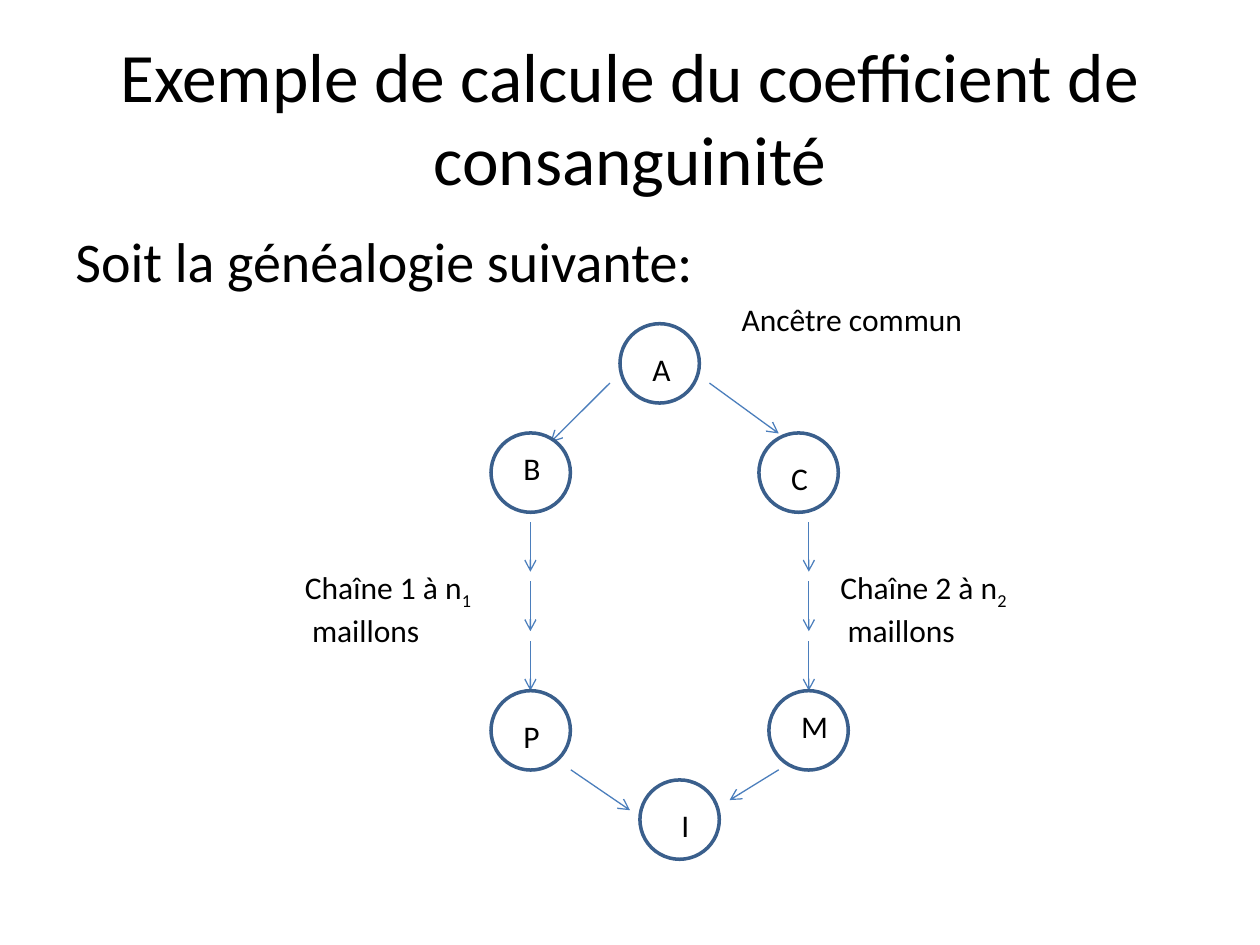
from pptx import Presentation
from pptx.dml.color import RGBColor
from pptx.enum import shapes, text
from pptx.oxml import ns
from pptx.util import Pt
from lxml import etree

COLORS = {"text": "000000", "circle": "FFFFFF", "outline": "3A5F8C", "arrow": "4B7EBC"}
FONT = "Calibri"
DIAMETER = 45.36

# Name: circle left, circle top, letter left, letter top
PEOPLE = {
    "A": (354.3, 185, 365.7, 196.4),
    "B": (280.6, 247.4, 292, 253),
    "C": (433.7, 247.4, 445, 258.7),
    "P": (280.6, 394.7, 292, 406),
    "M": (439.4, 394.7, 450.7, 400.4),
    "I": (365.7, 445.7, 382.3, 456.8),
}
DIAGONALS = [
    (405.4, 218.9, 445, 247.7),
    (348.5, 218.9, 314.6, 252.7),
    (445, 439.9, 416.9, 457.2),
    (326.2, 439.9, 360, 463),
]
CHAIN_COLUMNS = (303.1, 462.2)
CHAIN_TOP, LINK_STEP, LINK_LENGTH, LINK_COUNT = 298.3, 34, 28.4, 3


def color(name):
    return RGBColor.from_string(COLORS[name])


def add_span(para, words, size, subscript=False):
    span = para.add_run()
    span.text = words
    span.font.name = FONT
    span.font.size = Pt(size)
    span.font.color.rgb = color("text")
    if subscript:
        span._r.get_or_add_rPr().set("baseline", "-25000")


def add_text(page, lines, left, top, width, height, size=18,
             align=text.PP_ALIGN.LEFT, anchor=text.MSO_ANCHOR.TOP):
    """Each line is a list of spans; every second span is a subscript."""
    box = page.shapes.add_textbox(Pt(left), Pt(top), Pt(width), Pt(height))
    frame = box.text_frame
    frame.word_wrap = True
    frame.vertical_anchor = anchor
    for number, line in enumerate(lines):
        para = frame.add_paragraph() if number else frame.paragraphs[0]
        para.alignment = align
        for position, words in enumerate(line):
            add_span(para, words, size, subscript=position % 2 == 1)


def add_person(page, name, left, top, letter_left, letter_top):
    circle = page.shapes.add_shape(shapes.MSO_SHAPE.OVAL, Pt(left), Pt(top),
                                   Pt(DIAMETER), Pt(DIAMETER))
    circle.shadow.inherit = False
    circle.fill.solid()
    circle.fill.fore_color.rgb = color("circle")
    circle.line.color.rgb = color("outline")
    circle.line.width = Pt(2)
    add_text(page, [[name]], letter_left, letter_top, 34, 29)


def add_arrow(page, *ends):
    arrow = page.shapes.add_connector(shapes.MSO_CONNECTOR.STRAIGHT,
                                      *[Pt(end) for end in ends])
    arrow.line.color.rgb = color("arrow")
    arrow.line.width = Pt(0.75)
    etree.SubElement(arrow.line._get_or_add_ln(), ns.qn("a:tailEnd"), type="arrow")
    etree.SubElement(arrow._element.spPr, ns.qn("a:effectLst"))


def add_chain(page, x):
    for link in range(LINK_COUNT):
        top = CHAIN_TOP + link * LINK_STEP
        add_arrow(page, x, top, x, top + LINK_LENGTH)


def main():
    deck = Presentation()
    deck.slide_width, deck.slide_height = Pt(720), Pt(540)
    page = deck.slides.add_slide(deck.slide_layouts[6])

    add_text(page, [["Exemple de calcule du coefficient de consanguinité"]],
             36, 21.6, 648, 90, size=39.6,
             align=text.PP_ALIGN.CENTER, anchor=text.MSO_ANCHOR.MIDDLE)
    add_text(page, [["Soit la généalogie suivante:"]], 36, 126, 648, 356.4, size=32)

    for ends in DIAGONALS:
        add_arrow(page, *ends)
    for x in CHAIN_COLUMNS:
        add_chain(page, x)
    for name, places in PEOPLE.items():
        add_person(page, name, *places)

    add_text(page, [["Ancêtre commun"]], 416.7, 168, 158.4, 29)
    for number, left in (("1", 167.2), ("2", 473.2)):
        add_text(page, [[f"Chaîne {number} à n", number], [" maillons"]],
                 left, 321, 119, 51)

    deck.save("out.pptx")


if __name__ == "__main__":
    main()
